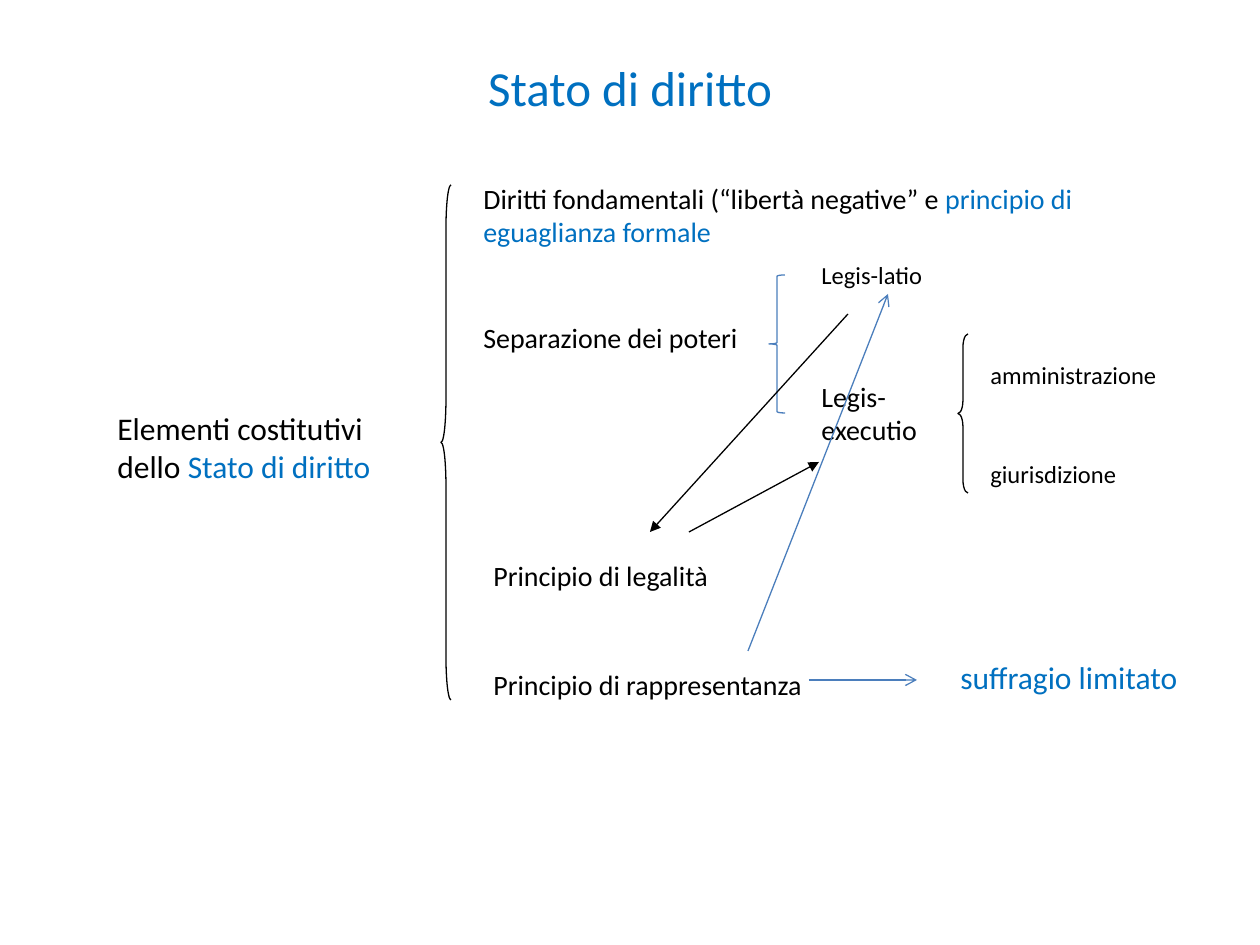
"""Build the slide on the constituent elements of the rule of law."""
from pptx import Presentation
from pptx.dml.color import RGBColor as RGB
from pptx.enum.shapes import MSO_CONNECTOR as LINE, MSO_SHAPE as SHAPE
from pptx.enum.text import MSO_ANCHOR as ANCHOR, PP_ALIGN as ALIGN
from pptx.oxml.ns import qn
from pptx.util import Emu, Pt
from lxml.etree import SubElement

PX = 914400 // 126
BLACK, BLUE, STEEL = "000000", "0070C0", "4B7EBC"
MID = {"vertical_anchor": ANCHOR.MIDDLE}
TOP = {"vertical_anchor": ANCHOR.TOP}

TITLE = ((63, 38, 1134, 97), 28, [("Stato di diritto", BLUE)])
TEXTS = [
    ((105, 403, 318, 88), 18,
     [("Elementi costitutivi dello ", BLACK), ("Stato di diritto", BLUE)]),
    ((471, 175, 684, 81), 16,
     [("Diritti fondamentali (“libertà negative” e ", BLACK),
      ("principio di eguaglianza formale", BLUE)]),
    ((471, 314, 307, 47), 16, [("Separazione dei poteri", BLACK)]),
    ((809, 254, 218, 42), 14, [("Legis-latio", BLACK)]),
    ((809, 373, 139, 81), 16, [("Legis-executio", BLACK)]),
    ((978, 354, 218, 42), 14, [("amministrazione", BLACK)]),
    ((978, 453, 228, 42), 14, [("giurisdizione", BLACK)]),
    ((481, 552, 397, 47), 16, [("Principio di legalità", BLACK)]),
    ((481, 661, 446, 47), 16, [("Principio di rappresentanza", BLACK)]),
    ((948, 652, 287, 50), 18, [("suffragio limitato", BLUE)]),
]
BRACES = [
    ((441, 185, 10, 515), 4.27, BLACK),
    ((958, 334, 10, 159), 1.32, BLACK),
    ((769, 275, 16, 138), 0.08, STEEL),
]
ARROWS = [
    ((848, 314, 650, 532), BLACK, "triangle"),
    ((689, 532, 819, 462), BLACK, "triangle"),
    ((809, 680, 917, 680), STEEL, "arrow"),
    ((748, 651, 888, 294), STEEL, "arrow"),
]


def emu(box):
    return [Emu(n * PX) for n in box]


def tint(color, code):
    color.rgb = RGB.from_string(code)


def style(item, form):
    for name, value in form.items():
        setattr(item, name, value)


def write(slide, box, size, runs, align=ALIGN.LEFT, form=TOP):
    frame = slide.shapes.add_textbox(*emu(box)).text_frame
    style(frame, {"word_wrap": True, **form})
    para = frame.paragraphs[0]
    para.alignment = align
    for text, code in runs:
        run = para.add_run()
        run.text = text
        style(run.font, {"name": "Calibri", "size": Pt(size)})
        tint(run.font.color, code)


def stroke(line, code):
    line.width = Pt(0.75)
    tint(line.color, code)


def brace(slide, box, bend, code):
    shape = slide.shapes.add_shape(SHAPE.LEFT_BRACE, *emu(box))
    shape.shadow.inherit = False
    shape.fill.background()
    shape.adjustments[0] = bend
    stroke(shape.line, code)


def arrow(slide, ends, code, head):
    link = slide.shapes.add_connector(LINE.STRAIGHT, *emu(ends))
    stroke(link.line, code)
    SubElement(link.line._get_or_add_ln(), qn("a:tailEnd"), type=head)
    SubElement(link._element.spPr, qn("a:effectLst"))


def main():
    deck = Presentation()
    style(deck, {"slide_width": Emu(1260 * PX), "slide_height": Emu(945 * PX)})
    slide = deck.slides.add_slide(deck.slide_layouts[6])
    write(slide, *TITLE, ALIGN.CENTER, MID)
    for item in TEXTS:
        write(slide, *item)
    for item in BRACES:
        brace(slide, *item)
    for item in ARROWS:
        arrow(slide, *item)
    deck.save("out.pptx")


if __name__ == "__main__":
    main()
